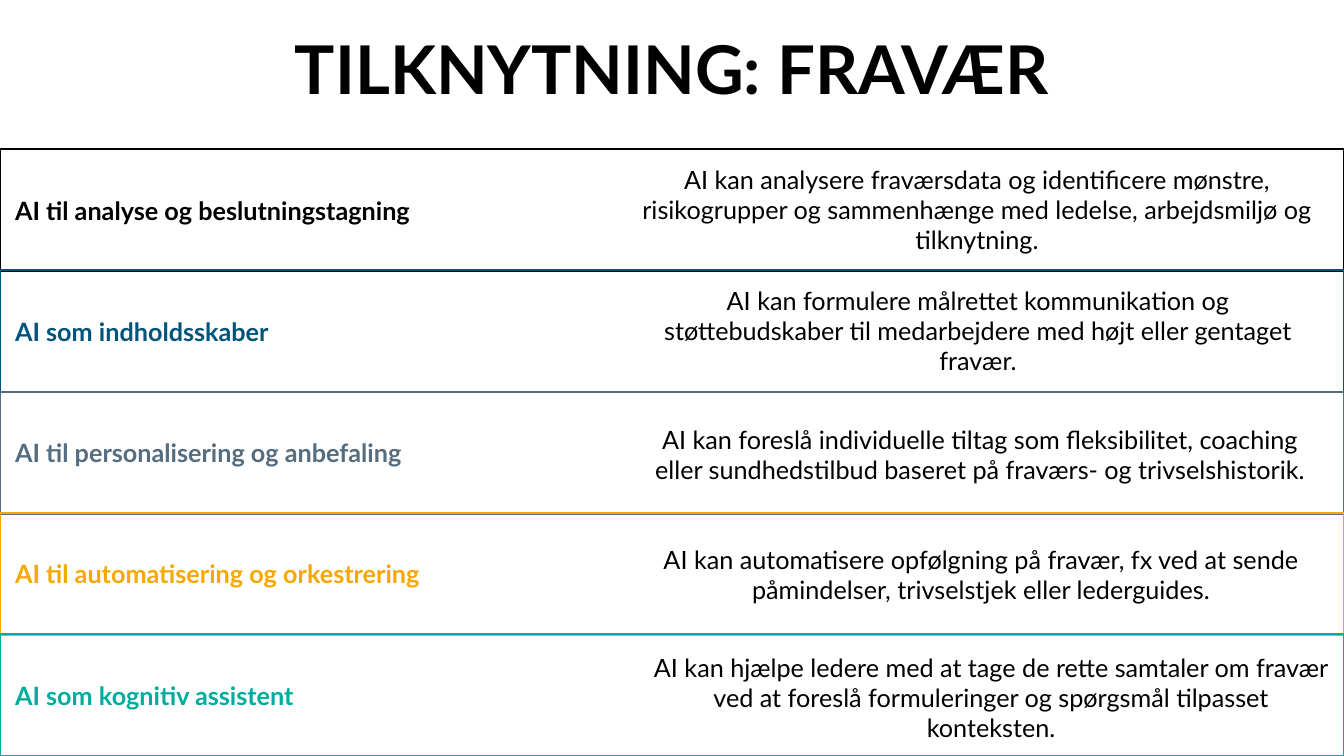
from dataclasses import dataclass

from pptx import Presentation
from pptx.dml.color import RGBColor
from pptx.enum.shapes import MSO_SHAPE
from pptx.enum.text import MSO_ANCHOR, MSO_AUTO_SIZE, PP_ALIGN
from pptx.slide import Slide
from pptx.text.text import TextFrame
from pptx.util import Inches, Pt

COLORS = {
    "black": "000000",
    "blue": "00547A",
    "slate": "556D7E",
    "amber": "F6A800",
    "teal": "00AC9C",
}
FONT = "Lato"
SLIDE_WIDTH = 13.33
SLIDE_HEIGHT = 7.5
FIRST_ROW_TOP = 1.48
ROW_HEIGHT = 1.21


@dataclass
class Row:
    heading: str
    color: str
    description: str
    description_left: float
    description_top: float


ROWS = [
    Row("AI til analyse og beslutningstagning", "black",
        "AI kan analysere fraværsdata og identificere mønstre, risikogrupper og "
        "sammenhænge med ledelse, arbejdsmiljø og tilknytning.", 6.19, 1.48),
    Row("AI som indholdsskaber", "blue",
        "AI kan formulere målrettet kommunikation og støttebudskaber til "
        "medarbejdere med højt eller gentaget fravær.", 6.2, 2.68),
    Row("AI til personalisering og anbefaling", "slate",
        "AI kan foreslå individuelle tiltag som fleksibilitet, coaching eller "
        "sundhedstilbud baseret på fraværs- og trivselshistorik.", 6.22, 3.91),
    Row("AI til automatisering og orkestrering", "amber",
        "AI kan automatisere opfølgning på fravær, fx ved at sende påmindelser, "
        "trivselstjek eller lederguides.", 6.23, 5.1),
    Row("AI som kognitiv assistent", "teal",
        "AI kan hjælpe ledere med at tage de rette samtaler om fravær ved at "
        "foreslå formuleringer og spørgsmål tilpasset konteksten.", 6.33, 6.32),
]
ROW_PITCH = (SLIDE_HEIGHT - ROW_HEIGHT - FIRST_ROW_TOP) / (len(ROWS) - 1)


def write_text(frame: TextFrame, text: str, size: int, color: str,
               bold: bool, alignment: PP_ALIGN) -> None:
    frame.word_wrap = True
    frame.auto_size = MSO_AUTO_SIZE.NONE
    frame.vertical_anchor = MSO_ANCHOR.MIDDLE
    paragraph = frame.paragraphs[0]
    paragraph.alignment = alignment
    run = paragraph.add_run()
    run.text = text
    run.font.name = FONT
    run.font.size = Pt(size)
    run.font.bold = bold
    run.font.color.rgb = RGBColor.from_string(COLORS[color])


def add_title(slide: Slide, text: str) -> None:
    title = slide.shapes.title
    title.left, title.top = Inches(0), Inches(0)
    title.width, title.height = Inches(SLIDE_WIDTH), Inches(1.34)
    write_text(title.text_frame, text, 48, "black", True, PP_ALIGN.CENTER)


def add_band(slide: Slide, row: Row, top: float) -> None:
    band = slide.shapes.add_shape(MSO_SHAPE.RECTANGLE, Inches(0), Inches(top),
                                  Inches(SLIDE_WIDTH), Inches(ROW_HEIGHT))
    band.shadow.inherit = False
    band.fill.background()
    band.line.color.rgb = RGBColor.from_string(COLORS[row.color])
    band.line.width = Pt(1.5)
    band.text_frame.margin_left = Inches(0.15)
    write_text(band.text_frame, row.heading, 18, row.color, True, PP_ALIGN.LEFT)


def add_description(slide: Slide, row: Row) -> None:
    box = slide.shapes.add_textbox(Inches(row.description_left), Inches(row.description_top),
                                   Inches(7), Inches(1.2))
    write_text(box.text_frame, row.description, 18, "black", False, PP_ALIGN.CENTER)


def main() -> None:
    presentation = Presentation()
    presentation.slide_width = Inches(SLIDE_WIDTH)
    presentation.slide_height = Inches(SLIDE_HEIGHT)
    slide = presentation.slides.add_slide(presentation.slide_layouts[5])
    add_title(slide, "TILKNYTNING: FRAVÆR")
    for index, row in enumerate(ROWS):
        add_band(slide, row, FIRST_ROW_TOP + index * ROW_PITCH)
    for row in ROWS:
        add_description(slide, row)
    presentation.save("out.pptx")


if __name__ == "__main__":
    main()
